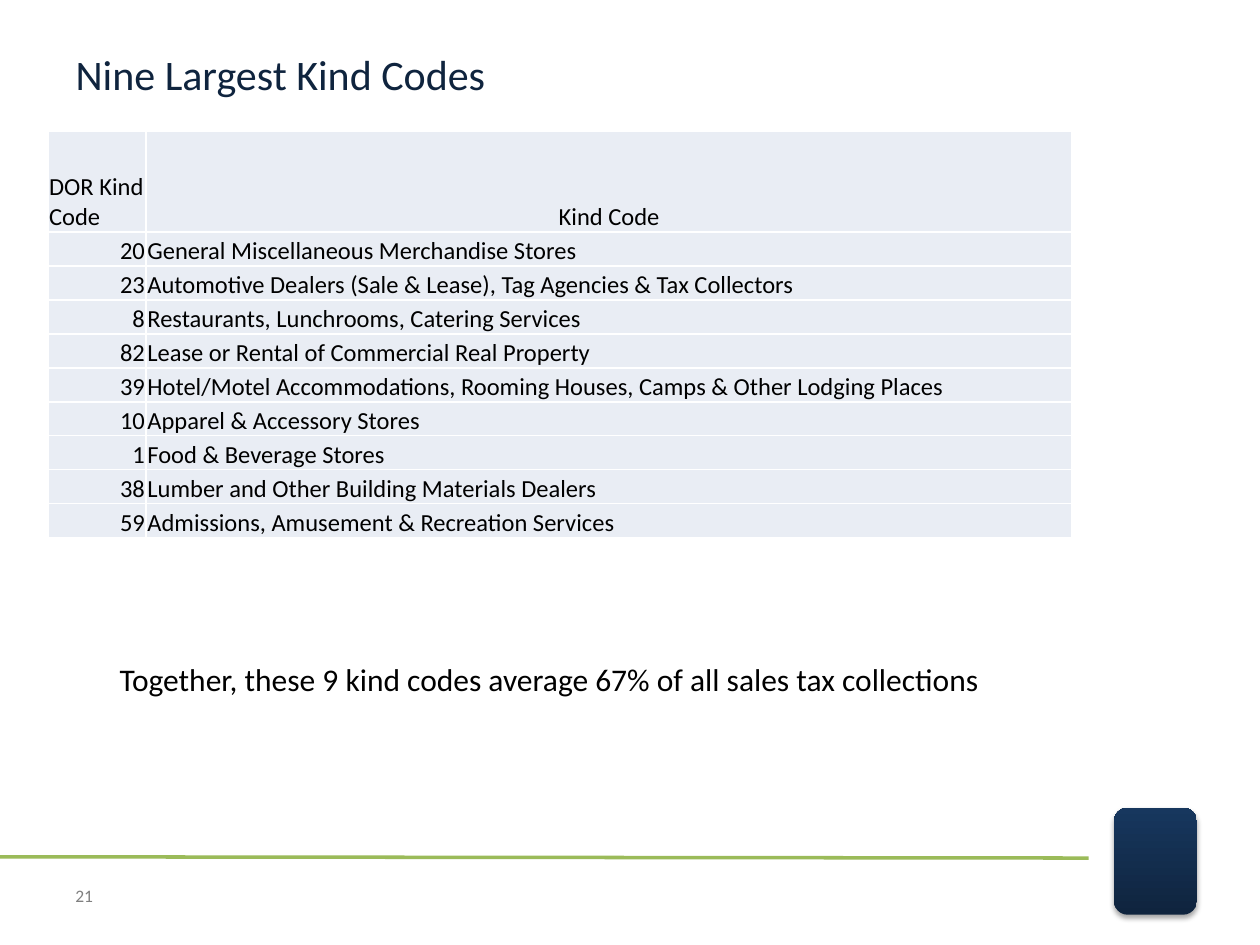
from lxml import etree
from pptx import Presentation, util as u
from pptx.dml.color import RGBColor
from pptx.enum import shapes, text
from pptx.oxml import parse_xml
from pptx.oxml.ns import qn

Inches = u.Inches
COLORS = {"navy": "0F243E", "blue": "17375E", "green": "9BBB59", "gray": "808080",
          "black": "000000", "white": "FFFFFF", "cell": "E9EDF4"}
NS = 'xmlns:a="http://schemas.openxmlformats.org/drawingml/2006/main"'


def rgb(name):
    return RGBColor.from_string(COLORS[name])


def write(frame, words, size, color, align=text.PP_ALIGN.LEFT):
    frame.word_wrap = True
    paragraph = frame.paragraphs[0]
    paragraph.text = words
    paragraph.alignment = align
    paragraph.font.name = "Calibri"
    paragraph.font.size = u.Pt(size)
    paragraph.font.color.rgb = rgb(color)


prs = Presentation()
prs.slide_width, prs.slide_height = Inches(10), Inches(7.5)
slide = prs.slides.add_slide(prs.slide_layouts[5])

badge = slide.shapes.add_shape(shapes.MSO_SHAPE.ROUNDED_RECTANGLE,
                               Inches(8.84), Inches(6.41), Inches(0.66), Inches(0.85))
badge.fill.gradient()
badge.fill.gradient_angle = 90
for stop, color in zip(badge.fill.gradient_stops, ("navy", "blue")):
    stop.color.rgb = rgb(color)
badge.line.fill.background()
badge.shadow.inherit = False
badge._element.spPr.find(qn("a:effectLst")).append(parse_xml(
    f'<a:outerShdw {NS} blurRad="{u.Pt(3.1)}" dist="{u.Pt(1.8)}" dir="5400000" rotWithShape="0">'
    f'<a:srgbClr val="{COLORS["black"]}"><a:alpha val="35000"/></a:srgbClr></a:outerShdw>'))

footer_rule = slide.shapes.add_connector(shapes.MSO_CONNECTOR.STRAIGHT,
                                         Inches(0), Inches(6.8), Inches(8.64), Inches(6.81))
footer_rule.line.color.rgb = rgb("green")
footer_rule.line.width = u.Pt(2)
etree.SubElement(footer_rule._element.spPr, qn("a:effectLst"))

title = slide.shapes.title
title.left, title.top, title.width, title.height = (
    Inches(0.5), Inches(0.3), Inches(8.12), Inches(0.57))
title.text_frame.vertical_anchor = text.MSO_ANCHOR.MIDDLE
write(title.text_frame, "Nine Largest Kind Codes", 24, "navy")

page_number = slide.shapes.add_textbox(Inches(0.5), Inches(6.95), Inches(2.33), Inches(0.32))
page_number.text_frame.vertical_anchor = text.MSO_ANCHOR.MIDDLE
write(page_number.text_frame, "21", 10, "gray")

kind_codes = [
    ("DOR Kind Code", "Kind Code"),
    ("20", "General Miscellaneous Merchandise Stores"),
    ("23", "Automotive Dealers (Sale & Lease), Tag Agencies & Tax Collectors"),
    ("8", "Restaurants, Lunchrooms, Catering Services"),
    ("82", "Lease or Rental of Commercial Real Property"),
    ("39", "Hotel/Motel Accommodations, Rooming Houses, Camps & Other Lodging Places"),
    ("10", "Apparel & Accessory Stores"),
    ("1", "Food & Beverage Stores"),
    ("38", "Lumber and Other Building Materials Dealers"),
    ("59", "Admissions, Amusement & Recreation Services"),
]
header_aligns = (text.PP_ALIGN.LEFT, text.PP_ALIGN.CENTER)
body_aligns = (text.PP_ALIGN.RIGHT, text.PP_ALIGN.LEFT)

codes_table = slide.shapes.add_table(len(kind_codes), 2, Inches(0.38), Inches(1.04),
                                     Inches(8.12), Inches(3.19)).table
codes_table.first_row = codes_table.horz_banding = False
codes_table.columns[0].width = Inches(0.78)
codes_table.columns[1].width = Inches(7.35)
for r, entry in enumerate(kind_codes):
    codes_table.rows[r].height = Inches(0.27 if r else 0.8)
    for c, words in enumerate(entry):
        cell = codes_table.cell(r, c)
        cell.margin_left = cell.margin_right = cell.margin_top = Inches(0.01)
        cell.margin_bottom = 0
        cell.vertical_anchor = text.MSO_ANCHOR.BOTTOM
        write(cell.text_frame, words, 14, "black", (body_aligns if r else header_aligns)[c])
        for side in ("lnL", "lnR", "lnT", "lnB"):
            cell._tc.get_or_add_tcPr().append(parse_xml(
                f'<a:{side} {NS} w="{u.Pt(1)}"><a:solidFill>'
                f'<a:srgbClr val="{COLORS["white"]}"/></a:solidFill></a:{side}>'))
        cell.fill.solid()
        cell.fill.fore_color.rgb = rgb("cell")

summary = slide.shapes.add_textbox(Inches(0.85), Inches(5.19), Inches(7.49), Inches(0.4))
summary.text_frame.auto_size = text.MSO_AUTO_SIZE.SHAPE_TO_FIT_TEXT
write(summary.text_frame,
      "Together, these 9 kind codes average 67% of all sales tax collections", 18, "black")

prs.save("out.pptx")
